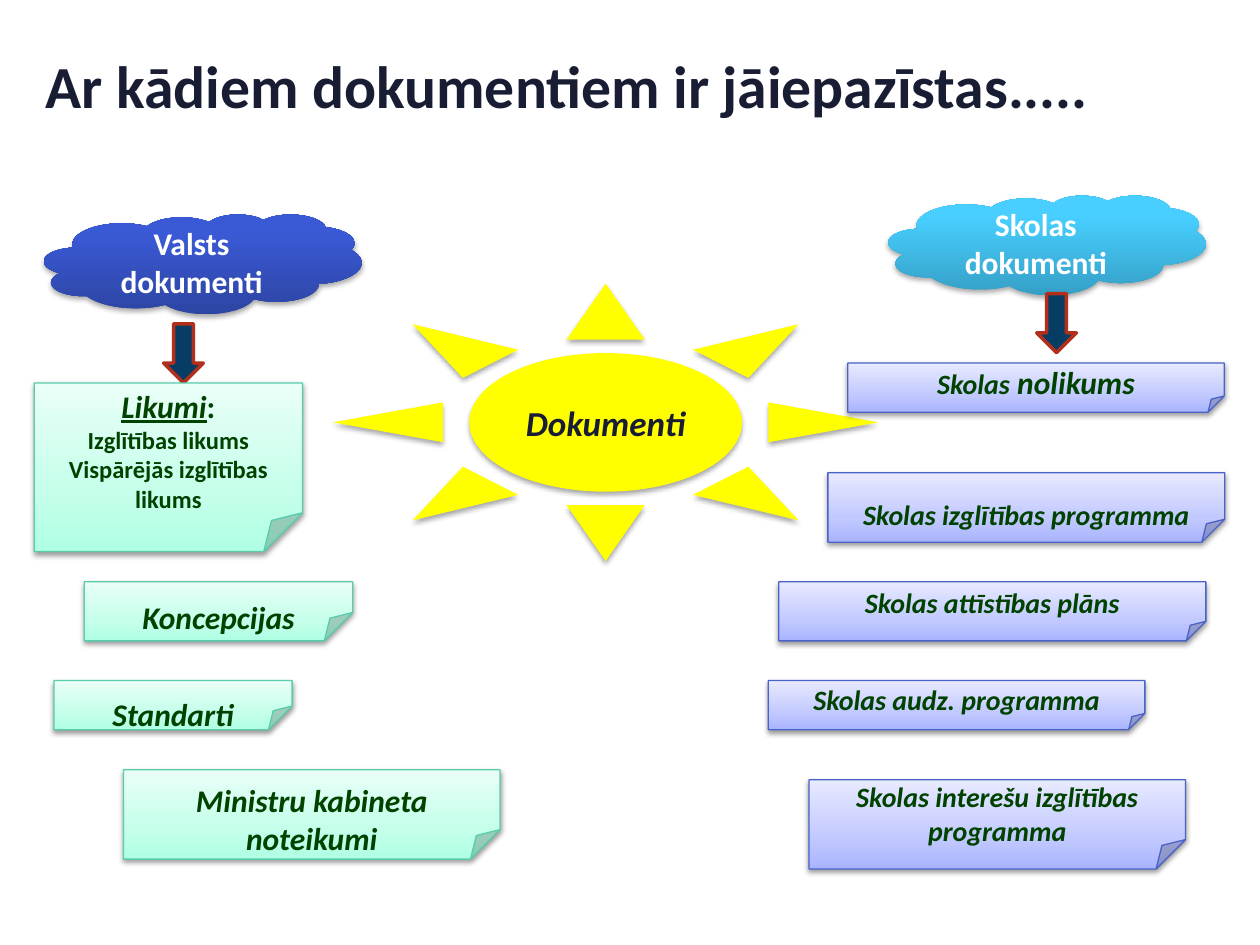
from dataclasses import dataclass

from lxml.etree import SubElement
from pptx import Presentation
from pptx.dml.color import RGBColor
from pptx.enum.shapes import MSO_SHAPE as Kind
from pptx.enum.text import MSO_ANCHOR as Anchor, PP_ALIGN as Align
from pptx.oxml.ns import qn
from pptx.util import Cm, Pt


@dataclass(frozen=True)
class Theme:
    """Colours, gradients and type sizes of the slide."""
    font: str = "Calibri"
    ink: str = "191D34"
    leaf: str = "004200"
    white: str = "FFFFFF"
    sun: str = "FFFF00"
    arrow: str = "073C65"
    edge: str = "B2301B"
    mint_edge: str = "58CCAC"
    lilac_edge: str = "4963C7"
    mint: tuple = ((0, "AEFFE3"), (35, "C5FFEA"), (100, "E9FFF7"))
    lilac: tuple = ((0, "A9B4FF"), (35, "C2C9FF"), (100, "E8EAFF"))
    navy: tuple = ((0, "2D45A3"), (80, "3A59D4"), (100, "3758D7"))
    sky: tuple = ((0, "35A0C6"), (80, "48CFFF"), (100, "49CFFF"))
    title: float = 34.1
    core: int = 20
    head: int = 18
    body: int = 16
    small: int = 14


THEME = Theme()


def style(run, size, color, italic=False):
    """Format one bold run."""
    font = run.font
    font.name, font.size = THEME.font, Pt(size)
    font.bold, font.italic = True, italic
    font.color.rgb = RGBColor.from_string(color)


def write(frame, text, size, color, italic=False):
    """Fill a text frame with centred, formatted paragraphs."""
    frame.text = text
    frame.word_wrap = True
    for para in frame.paragraphs:
        para.alignment = Align.CENTER
        for run in para.runs:
            style(run, size, color, italic)


def blend(shape, stops):
    """Give a shape an upward gradient through the given stops."""
    shape.fill.gradient()
    shape.fill.gradient_angle = 90
    group = shape._element.spPr.find(qn("a:gradFill")).find(qn("a:gsLst"))
    group.clear()
    for pos, color in stops:
        stop = SubElement(group, qn("a:gs"), pos=str(pos * 1000))
        SubElement(stop, qn("a:srgbClr"), val=color)


def shade(shape, alpha, gap):
    """Add a soft shadow straight below a shape."""
    group = shape._element.spPr.find(qn("a:effectLst"))
    outer = SubElement(group, qn("a:outerShdw"), blurRad=str(Pt(3.1)),
                       dist=str(Pt(gap)), dir="5400000", rotWithShape="0")
    color = SubElement(outer, qn("a:srgbClr"), val="000000")
    SubElement(color, qn("a:alpha"), val=str(alpha * 1000))


def crease(shape, fold):
    """Set the size of a folded corner."""
    group = shape._element.spPr.find(qn("a:prstGeom")).find(qn("a:avLst"))
    group.clear()
    SubElement(group, qn("a:gd"), name="adj",
               fmla=f"val {round(fold * 100000)}")


def add_shape(slide, kind, box, fill, edge=None, width=0.75):
    """Add a preset shape with a plain or gradient fill."""
    shape = slide.shapes.add_shape(kind, *map(Cm, box))
    shape.shadow.inherit = False
    if isinstance(fill, str):
        shape.fill.solid()
        shape.fill.fore_color.rgb = RGBColor.from_string(fill)
    else:
        blend(shape, fill)
    if edge:
        shape.line.color.rgb = RGBColor.from_string(edge)
        shape.line.width = Pt(width)
    else:
        shape.line.fill.background()
    return shape


def add_title(slide, text):
    """Place and format the slide title."""
    title = slide.shapes.title
    title.left, title.top, title.width, title.height = map(
        Cm, (0, 0.76, 22.86, 2.16))
    write(title.text_frame, text, THEME.title, THEME.ink)
    title.text_frame.vertical_anchor = Anchor.MIDDLE
    title.text_frame.paragraphs[0].line_spacing = 0.8


def add_sun(slide, text):
    """Add the central sun."""
    sun = add_shape(slide, Kind.SUN, (6.71, 5.72, 11, 5.59), THEME.sun)
    shade(sun, 35, 1.8)
    write(sun.text_frame, text, THEME.core, THEME.ink, True)


def add_cloud(slide, left, top, fill, text):
    """Add the cloud that heads a group."""
    cloud = add_shape(slide, Kind.CLOUD, (left, top, 6.4, 2.01), fill)
    shade(cloud, 35, 1.8)
    write(cloud.text_frame, text, THEME.head, THEME.white)


def add_arrow(slide, left, top):
    """Add a block arrow below a cloud."""
    add_shape(slide, Kind.DOWN_ARROW, (left, top, 0.8, 1.19),
              THEME.arrow, THEME.edge, 2)


def add_note(slide, box, fold, inset, text, fill, edge, size):
    """Add a folded note and return its text frame."""
    note = add_shape(slide, Kind.FOLDED_CORNER, box, fill, edge)
    crease(note, fold)
    shade(note, 38, 1.6)
    frame = note.text_frame
    write(frame, text, size, THEME.leaf, True)
    frame.vertical_anchor = Anchor.TOP
    frame.margin_top, frame.margin_bottom = Cm(inset), 0
    return frame


def add_state(slide):
    """Add the state documents on the left."""
    add_cloud(slide, 0.89, 4.32, THEME.navy, "Valsts dokumenti")
    add_arrow(slide, 3.3, 6.53)
    notes = (
        ((0.69, 7.72, 5.41, 3.4), 0.23, 0.08,
         "Likumi\nIzglītības likums\nVispārējās izglītības likums"),
        ((1.7, 11.73, 5.41, 1.19), 0.48, 0.33, "Koncepcijas"),
        ((1.09, 13.72, 4.8, 0.99), 0.48, 0.29, "Standarti"),
        ((2.49, 15.52, 7.59, 1.8), 0.33, 0.23, "Ministru kabineta noteikumi"),
    )
    look = THEME.mint, THEME.mint_edge, THEME.head
    frames = [add_note(slide, *note, *look) for note in notes]
    head, *laws = frames[0].paragraphs
    head.runs[0].font.underline = True
    colon = head.add_run()
    colon.text = ":"
    style(colon, THEME.head, THEME.leaf)
    for law in laws:
        style(law.runs[0], THEME.small, THEME.leaf)


def add_school(slide):
    """Add the school documents on the right."""
    add_cloud(slide, 17.91, 3.94, THEME.sky, "Skolas dokumenti")
    notes = (
        ((17.09, 7.32, 7.59, 0.99), 0, "Skolas"),
        ((16.69, 9.53, 8, 1.4), 0.51, "Skolas izglītības programma"),
        ((15.7, 11.73, 8.61, 1.19), 0.08, "Skolas attīstības plāns"),
        ((15.49, 13.72, 7.59, 0.99), 0.03, "Skolas audz. programma"),
        ((16.31, 15.72, 7.59, 1.8), 0, "Skolas interešu izglītības programma"),
    )
    look = THEME.lilac, THEME.lilac_edge, THEME.body
    frames = [add_note(slide, box, 0.33, inset, text, *look)
              for box, inset, text in notes]
    rules = frames[0].paragraphs[0].add_run()
    rules.text = " nolikums"
    style(rules, THEME.head, THEME.leaf, True)
    add_arrow(slide, 20.9, 5.92)


def main():
    """Build the slide and save it."""
    deck = Presentation()
    deck.slide_width, deck.slide_height = Cm(25.4), Cm(19.05)
    slide = deck.slides.add_slide(deck.slide_layouts[5])
    add_title(slide, "Ar kādiem dokumentiem ir jāiepazīstas.....")
    add_sun(slide, "Dokumenti")
    add_state(slide)
    add_school(slide)
    deck.save("out.pptx")


if __name__ == "__main__":
    main()
